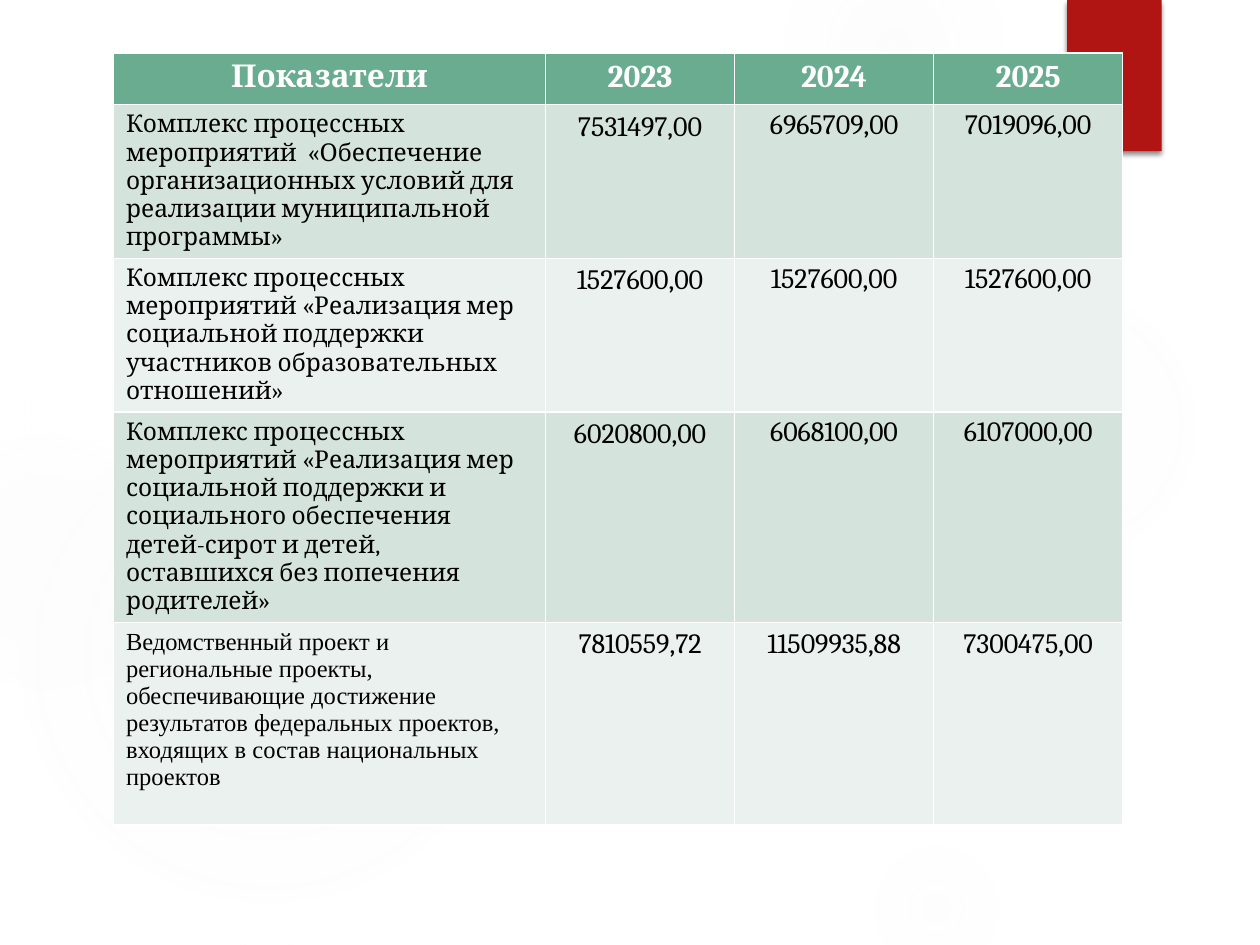
from pptx import Presentation
from pptx.dml.color import RGBColor
from pptx.enum.shapes import MSO_SHAPE
from pptx.enum.text import PP_ALIGN
from pptx.oxml import parse_xml
from pptx.oxml.ns import nsdecls, qn
from pptx.util import Inches, Pt

ELLIPSE, RECTANGLE = MSO_SHAPE.OVAL, MSO_SHAPE.RECTANGLE
LEFT, CENTER = PP_ALIGN.LEFT, PP_ALIGN.CENTER

COLORS = {
    "glow": "F3F3F3",
    "ribbon": "B01513",
    "header": "6AAC90",
    "band_dark": "D4E3DB",
    "band_light": "EBF1EE",
    "white": "FFFFFF",
    "black": "000000",
}
FONT = "Cambria"
PROJECT_FONT = "Times New Roman"

# Left, top, diameter, then (position, opacity) stops in percent
GLOWS = [
    (6.89, 1.83, 3.08, [(0, 7), (36, 6), (69, 0)]),
    (6.22, -0.5, 1.75, [(0, 14), (36, 7), (73, 0)]),
    (6.89, 6.67, 1.08, [(0, 9), (36, 5), (66, 0)]),
    (-0.17, 2.92, 4.58, [(0, 11), (36, 10), (75, 0)]),
    (-0.92, 3.17, 2.58, [(0, 8), (36, 8), (72, 0)]),
]

HEADINGS = ["Показатели", "2023", "2024", "2025"]
PROGRAMS = [
    ("Комплекс процессных мероприятий  «Обеспечение организационных условий "
     "для реализации муниципальной программы»",
     "7531497,00", "6965709,00", "7019096,00"),
    ("Комплекс процессных мероприятий «Реализация мер социальной поддержки "
     "участников образовательных отношений»",
     "1527600,00", "1527600,00", "1527600,00"),
    ("Комплекс процессных мероприятий «Реализация мер социальной поддержки "
     "и социального обеспечения детей-сирот и детей, оставшихся без попечения "
     "родителей»",
     "6020800,00", "6068100,00", "6107000,00"),
    ("Ведомственный проект и региональные проекты, обеспечивающие достижение "
     "результатов федеральных проектов, входящих в состав национальных проектов",
     "7810559,72", "11509935,88", "7300475,00"),
]
COLUMN_WIDTHS = [3.43, 1.5, 1.58, 1.5]
ROW_HEIGHTS = [0.41, 1.22, 1.22, 1.67, 1.61]


class SlideBuilder:
    def __init__(self, slide, colors, font):
        self.slide = slide
        self.colors = colors
        self.font = font

    def rgb(self, name):
        return RGBColor.from_string(self.colors[name])

    def plain_shape(self, kind, left, top, width, height, color):
        shape = self.slide.shapes.add_shape(
            kind, Inches(left), Inches(top), Inches(width), Inches(height))
        shape.shadow.inherit = False
        shape.fill.solid()
        shape.fill.fore_color.rgb = self.rgb(color)
        shape.line.fill.background()
        return shape

    def glow(self, left, top, diameter, stops):
        circle = self.plain_shape(ELLIPSE, left, top, diameter, diameter, "glow")
        gradient_stops = "".join(
            f'<a:gs pos="{position * 1000}"><a:srgbClr val="{self.colors["glow"]}">'
            f'<a:alpha val="{opacity * 1000}"/></a:srgbClr></a:gs>'
            for position, opacity in stops)
        gradient = parse_xml(
            f'<a:gradFill {nsdecls("a")} rotWithShape="1">'
            f'<a:gsLst>{gradient_stops}</a:gsLst><a:path path="circle">'
            '<a:fillToRect l="50000" t="50000" r="50000" b="50000"/>'
            '</a:path></a:gradFill>')
        properties = circle._element.spPr
        properties.replace(properties.find(qn("a:solidFill")), gradient)

    def ribbon(self, left, top, width, height):
        ribbon = self.plain_shape(RECTANGLE, left, top, width, height, "ribbon")
        ribbon._element.spPr.find(qn("a:effectLst")).append(parse_xml(
            f'<a:outerShdw {nsdecls("a")} blurRad="{Pt(3)}" dist="{Pt(2)}" '
            f'dir="5400000"><a:srgbClr val="{self.colors["black"]}">'
            '<a:alpha val="45000"/></a:srgbClr></a:outerShdw>'))

    def table(self, left, top, widths, heights):
        table = self.slide.shapes.add_table(
            len(heights), len(widths), Inches(left), Inches(top),
            Inches(sum(widths)), Inches(sum(heights))).table
        for column, width in zip(table.columns, widths):
            column.width = Inches(width)
        for row, height in zip(table.rows, heights):
            row.height = Inches(height)
        return table

    def cell(self, cell, text, size, fill, color="black", bold=False,
             align=CENTER, font=None, flush=False):
        cell.fill.solid()
        cell.fill.fore_color.rgb = self.rgb(fill)
        paragraph = cell.text_frame.paragraphs[0]
        paragraph.alignment = align
        if flush:
            cell.margin_left = cell.margin_right = 0
            cell.margin_top = cell.margin_bottom = 0
            paragraph.line_spacing = 1.15
        run = paragraph.add_run()
        run.text = text
        run.font.name = font or self.font
        run.font.size = Pt(size)
        run.font.bold = bold
        run.font.color.rgb = self.rgb(color)


def main():
    deck = Presentation()
    deck.slide_width, deck.slide_height = Inches(10), Inches(7.5)
    builder = SlideBuilder(
        deck.slides.add_slide(deck.slide_layouts[6]), COLORS, FONT)

    # Background decoration
    for glow in GLOWS:
        builder.glow(*glow)
    builder.ribbon(8.47, 0, 0.75, 1.2)

    # Budget table: header row
    budget = builder.table(0.9, 0.42, COLUMN_WIDTHS, ROW_HEIGHTS)
    for column, heading in enumerate(HEADINGS):
        builder.cell(budget.cell(0, column), heading, 18, "header",
                     color="white", bold=True)

    # Budget table: one row per program
    for row, (program, *amounts) in enumerate(PROGRAMS, start=1):
        band = "band_dark" if row % 2 else "band_light"
        is_project = row == len(PROGRAMS)
        builder.cell(budget.cell(row, 0), program, 14, band, align=LEFT,
                     font=PROJECT_FONT if is_project else FONT)
        for column, amount in enumerate(amounts, start=1):
            builder.cell(budget.cell(row, column), amount, 16, band,
                         flush=column > 1 and not is_project)

    deck.save("out.pptx")


if __name__ == "__main__":
    main()
